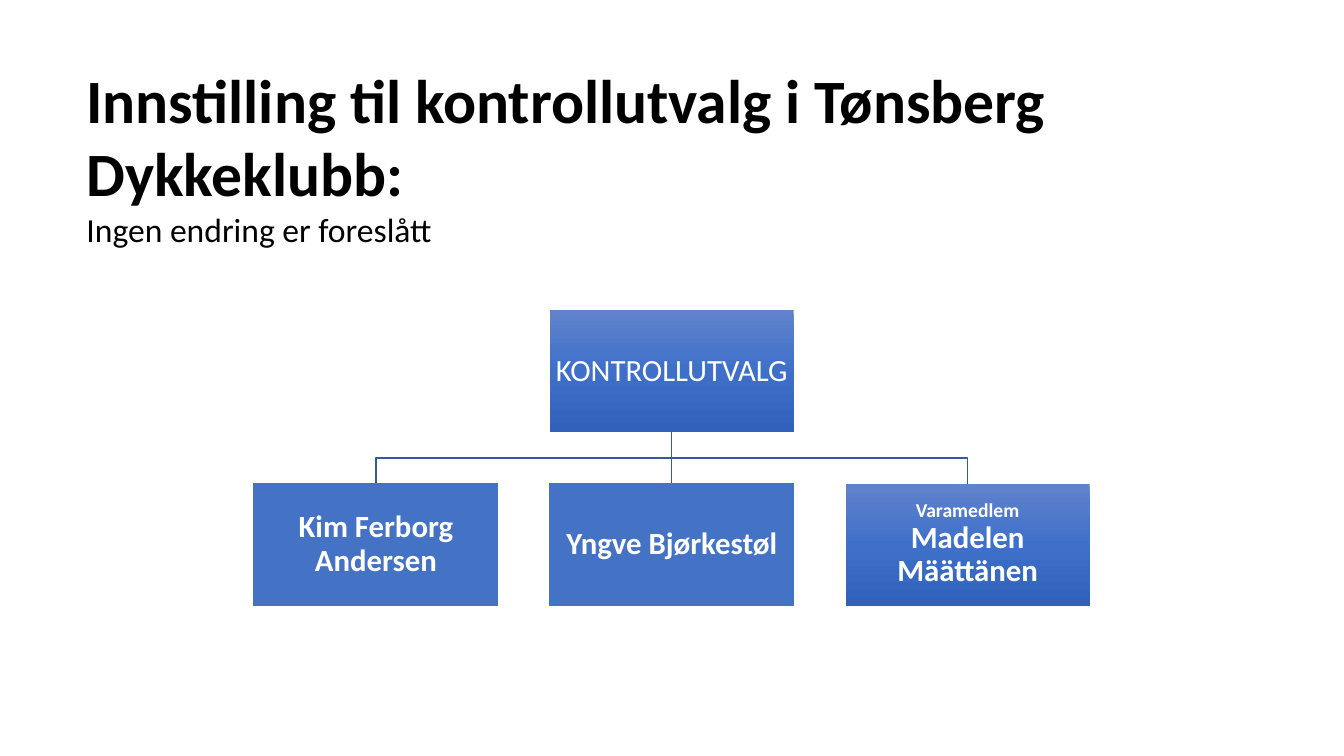
from copy import deepcopy

from lxml import etree
from pptx import Presentation
from pptx.dml.color import RGBColor
from pptx.enum.shapes import MSO_CONNECTOR, MSO_SHAPE
from pptx.enum.text import MSO_ANCHOR, PP_ALIGN
from pptx.oxml.ns import qn
from pptx.util import Cm, Pt

RECTANGLE = MSO_SHAPE.RECTANGLE
STRAIGHT = MSO_CONNECTOR.STRAIGHT
TOP, MIDDLE = MSO_ANCHOR.TOP, MSO_ANCHOR.MIDDLE
LEFT, CENTER = PP_ALIGN.LEFT, PP_ALIGN.CENTER

FONT = "Calibri"
BLACK, WHITE = "000000", "FFFFFF"
BLUE, LINE_BLUE = "4472C4", "365B9D"
GRADIENT = ["6183CB", "3E70CA", "3062BB"]

CARD_WIDTH, CARD_HEIGHT = Cm(6.15), Cm(3.07)
HEAD = [("KONTROLLUTVALG", 22, False)]
# Each member: lines of (text, size, bold), and whether the card is shaded
MEMBERS = [
    ([("Kim Ferborg Andersen", 22, True)], False),
    ([("Yngve Bjørkestøl", 22, True)], False),
    ([("Varamedlem", 14, True), ("Madelen Määttänen", 22, True)], True),
]


def color(hex_string):
    return RGBColor.from_string(hex_string)


def add_span(para, text, size=22, bold=False, ink=BLACK):
    span = para.add_run()
    span.text = text
    span.font.name = FONT
    span.font.size = Pt(size)
    span.font.bold = bold
    span.font.color.rgb = color(ink)


def set_frame(frame, margin_x, margin_y, anchor):
    frame.word_wrap = True
    frame.vertical_anchor = anchor
    frame.margin_left = frame.margin_right = margin_x
    frame.margin_top = frame.margin_bottom = margin_y


def fill_gradient(shape, colors):
    shape.fill.gradient()
    shape.fill.gradient_angle = 270
    first = next(shape.element.iter(qn("a:gs")))
    for _ in range(len(colors) - 2):
        first.addnext(deepcopy(first))
    for index, stop in enumerate(shape.fill.gradient_stops):
        stop.position = index / (len(colors) - 1)
        stop.color.rgb = color(colors[index])


def add_title(page, left, top, width, height):
    box = page.shapes.add_textbox(left, top, width, height)
    frame = box.text_frame
    set_frame(frame, Cm(0.25), Cm(0.13), TOP)
    heading = frame.paragraphs[0]
    heading.alignment = LEFT
    add_span(heading, "Innstilling til kontrollutvalg i Tønsberg Dykkeklubb:",
             size=44, bold=True)
    add_span(frame.add_paragraph(), "Ingen endring er foreslått", size=24)


def add_card(page, left, top, lines, shaded):
    card = page.shapes.add_shape(RECTANGLE, left, top, CARD_WIDTH, CARD_HEIGHT)
    card.shadow.inherit = False
    if shaded:
        fill_gradient(card, GRADIENT)
        card.line.fill.background()
    else:
        card.fill.solid()
        card.fill.fore_color.rgb = color(BLUE)
        card.line.color.rgb = color(BLUE)
        card.line.width = Pt(0.75)
    set_frame(card.text_frame, Cm(0.04), Cm(0.04), MIDDLE)
    para = card.text_frame.paragraphs[0]
    para.alignment = CENTER
    para.line_spacing = 0.9
    for index, (text, size, bold) in enumerate(lines):
        if index:
            para.add_line_break()
        add_span(para, text, size=size, bold=bold, ink=WHITE)


def add_branch(page, start_x, start_y, end_x, end_y):
    if start_x == end_x:
        branch = page.shapes.add_connector(STRAIGHT, start_x, start_y, end_x, end_y)
        etree.SubElement(branch.element.spPr, qn("a:effectLst"))
    else:
        middle_y = (start_y + end_y) // 2
        builder = page.shapes.build_freeform(start_x, start_y)
        builder.add_line_segments(
            [(start_x, middle_y), (end_x, middle_y), (end_x, end_y)], close=False)
        branch = builder.convert_to_shape()
        branch.fill.background()
        branch.shadow.inherit = False
    branch.line.color.rgb = color(LINE_BLUE)
    branch.line.width = Pt(1)


def add_committee(page, left, top, width, height):
    step = (width - CARD_WIDTH) // (len(MEMBERS) - 1)
    head_left = left + (width - CARD_WIDTH) // 2
    row_top = top + height - CARD_HEIGHT
    half = CARD_WIDTH // 2
    card_lefts = [left + index * step for index in range(len(MEMBERS))]
    # Branches lie behind the cards
    for card_left in card_lefts:
        add_branch(page, head_left + half, top + CARD_HEIGHT,
                   card_left + half, row_top)
    # Committee on top, members in a row below
    add_card(page, head_left, top, HEAD, True)
    for card_left, (lines, shaded) in zip(card_lefts, MEMBERS):
        add_card(page, card_left, row_top, lines, shaded)


def main():
    deck = Presentation()
    deck.slide_width, deck.slide_height = Cm(33.87), Cm(19.05)
    page = deck.slides.add_slide(deck.slide_layouts[6])
    add_title(page, Cm(1.93), Cm(1.42), Cm(31.17), Cm(5.2))
    add_committee(page, Cm(6.4), Cm(7.82), Cm(21.06), Cm(7.44))
    deck.save("out.pptx")


if __name__ == "__main__":
    main()
